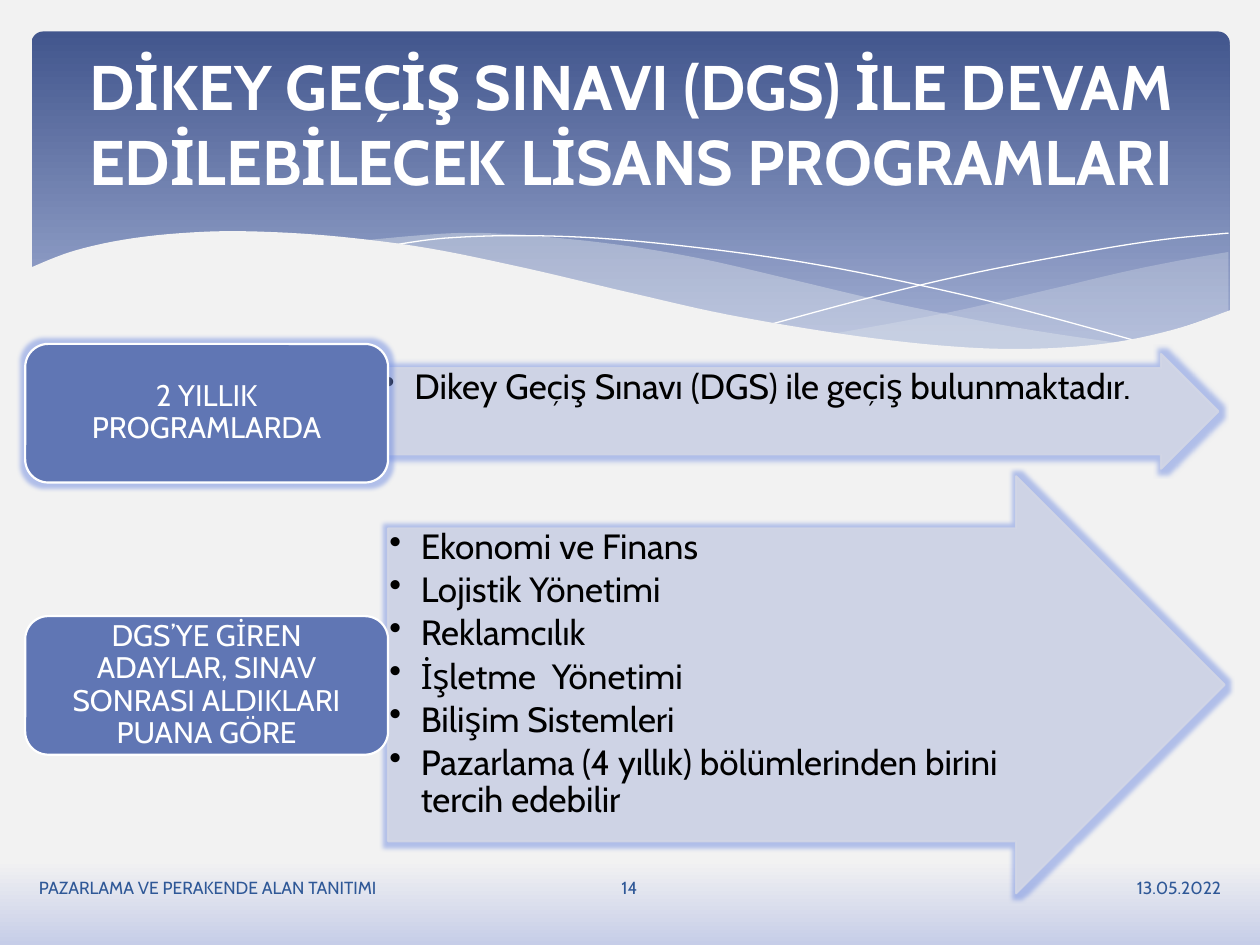
import lxml.etree
import pptx
import pptx.dml.color
import pptx.enum.shapes
import pptx.enum.text
import pptx.oxml.ns
import pptx.util

Inches = pptx.util.Inches
Pt = pptx.util.Pt
Shape = pptx.enum.shapes.MSO_SHAPE
Align = pptx.enum.text.PP_ALIGN
Anchor = pptx.enum.text.MSO_ANCHOR

PAPER, PALE, BLUE, WHITE = "F2F2F2", "D2D6E5", "6076B4", "FFFFFF"
MIST, NAVY, GLOW = "E4E9EF", "2F5897", "6F8BE0"

PALE_RIGHT_TOP = [(9.75, 2), (9.35, 2.07), (8.91, 2.16), (8.32, 2.3), (7.53, 2.48), (6.61, 2.65)]
PALE_RIGHT_BASE = [(6.61, 2.65), (7.19, 2.72), (7.69, 2.77), (8.14, 2.78), (8.63, 2.75), (9.13, 2.67), (9.75, 2.47)]
PALE_LONG_TOP = [(8.93, 2.73), (8.07, 2.6), (7.06, 2.4), (6.29, 2.22), (5.55, 2.05), (4.89, 1.94),
                 (4.2, 1.87), (3.61, 1.85), (2.86, 1.91)]
PALE_LONG_BASE = [(2.86, 1.91), (3.62, 2.03), (4.49, 2.22), (5.3, 2.4), (6.18, 2.58), (6.95, 2.7),
                  (7.61, 2.77), (8.18, 2.78), (8.93, 2.73)]
FALLING_LINE = [(3.09, 1.95), (3.53, 1.89), (4.16, 1.87), (4.89, 1.9), (5.82, 2), (6.65, 2.13),
                (7.6, 2.33), (8.31, 2.51), (9.07, 2.72)]
RISING_LINE = [(6.13, 2.57), (6.95, 2.35), (7.76, 2.16), (8.66, 1.99), (9.24, 1.9), (9.75, 1.85)]
WAVE_TOP = [(9.77, 2.46), (9.3, 2.62), (8.75, 2.73), (8.09, 2.77), (7.44, 2.74), (6.68, 2.65),
            (5.79, 2.5), (5.03, 2.33), (4.18, 2.13), (3.4, 1.97), (2.71, 1.88), (2.11, 1.84),
            (1.61, 1.84), (1.06, 1.89), (0.59, 1.99), (0.23, 2.13)]
WAVE_BASE = [(0.23, 3.29), (9.77, 3.29)]


def color(value):
    return pptx.dml.color.RGBColor.from_string(value)


def curve(knots, steps=6):
    ends = [knots[0], *knots, knots[-1]]
    points = [knots[0]]
    for a, b, c, d in zip(ends, ends[1:], ends[2:], ends[3:]):
        for step in range(1, steps + 1):
            t = step / steps
            points.append(tuple(
                (2 * q + (r - p) * t + (2 * p - 5 * q + 4 * r - s) * t ** 2
                 + (3 * q - p - 3 * r + s) * t ** 3) / 2
                for p, q, r, s in zip(a, b, c, d)))
    return points


def add_node(parent, tag, **attributes):
    return lxml.etree.SubElement(parent, pptx.oxml.ns.qn(tag), attributes)


def set_alpha(fill_owner, percent):
    for solid in fill_owner.findall(pptx.oxml.ns.qn("a:solidFill")):
        add_node(solid[0], "a:alpha", val=str(percent * 1000))


def set_gradient(fill, stops):
    fill.gradient()
    fill.gradient_angle = 270
    for stop, (position, value) in zip(fill.gradient_stops, stops):
        stop.position = position
        stop.color.rgb = color(value)


def write(frame, *lines, size=20, ink="000000", bold=False, align=Align.LEFT, anchor=Anchor.MIDDLE,
          inset=(0.1, 0.05), spacing=None, after=0, bullet=False):
    frame.word_wrap = True
    frame.auto_size = pptx.enum.text.MSO_AUTO_SIZE.NONE
    frame.vertical_anchor = anchor
    frame.margin_left = frame.margin_right = Inches(inset[0])
    frame.margin_top = frame.margin_bottom = Inches(inset[1])
    for index, line in enumerate(lines):
        para = frame.add_paragraph() if index else frame.paragraphs[0]
        para.alignment = align
        para.line_spacing = spacing
        para.space_after = Pt(after)
        if bullet:
            properties = para._p.get_or_add_pPr()
            properties.set("marL", str(Inches(0.25)))
            properties.set("indent", str(-Inches(0.25)))
            add_node(properties, "a:buChar", char="•")
        span = para.add_run()
        span.text = line
        span.font.name = "Cabin"
        span.font.size = Pt(size)
        span.font.bold = bold
        span.font.color.rgb = color(ink)


class SlideBuilder:
    def __init__(self, deck):
        self.slide = deck.slides.add_slide(deck.slide_layouts[5])
        self.shapes = self.slide.shapes

    def background(self, *stops):
        set_gradient(self.slide.background.fill, stops)

    def title(self, text, *place):
        box = self.shapes.title
        box.left, box.top, box.width, box.height = map(Inches, place)
        write(box.text_frame, text, size=36, ink=WHITE, bold=True, align=Align.CENTER)
        self.shapes._spTree.append(box._element)

    def preset(self, kind, *place, adjust=()):
        shape = self.shapes.add_shape(kind, *map(Inches, place))
        shape.shadow.inherit = False
        for index, value in enumerate(adjust):
            shape.adjustments[index] = value
        return shape

    def banner(self, *place, stops):
        shape = self.preset(Shape.ROUNDED_RECTANGLE, *place, adjust=[0.034])
        set_gradient(shape.fill, stops)
        shape.line.fill.background()

    def freeform(self, points, fill=None, alpha=100):
        points = [tuple(map(Inches, point)) for point in points]
        outline = self.shapes.build_freeform(*points[0])
        outline.add_line_segments(points[1:], close=bool(fill))
        shape = outline.convert_to_shape()
        shape.shadow.inherit = False
        if fill:
            shape.fill.solid()
            shape.fill.fore_color.rgb = color(fill)
            set_alpha(shape._element.spPr, alpha)
            shape.line.fill.background()
        else:
            shape.fill.background()
            shape.line.color.rgb = color(WHITE)
            shape.line.width = Pt(0)

    def paint(self, shape, fill, line, glow):
        shape.fill.solid()
        shape.fill.fore_color.rgb = color(fill)
        shape.line.color.rgb = color(line)
        shape.line.width = Pt(1.25)
        if glow:
            effects = shape._element.spPr.find(pptx.oxml.ns.qn("a:effectLst"))
            halo = add_node(effects, "a:glow", rad=str(Pt(5)))
            tint = add_node(halo, "a:srgbClr", val=GLOW)
            add_node(tint, "a:alpha", val="50000")

    def arrow(self, *place, lines):
        shape = self.preset(Shape.RIGHT_ARROW, *place, adjust=[0.75, 0.5])
        self.paint(shape, PALE, PALE, glow=True)
        set_alpha(shape._element.spPr, 90)
        set_alpha(shape.line._ln, 90)
        write(shape.text_frame, *lines, anchor=Anchor.TOP, inset=(0.01, 0.01),
              spacing=0.9, after=3, bullet=True)

    def label(self, text, top, glow):
        shape = self.preset(Shape.ROUNDED_RECTANGLE, 0.2, top, 2.88, 1.1)
        self.paint(shape, BLUE, WHITE, glow)
        write(shape.text_frame, text, size=17, ink=WHITE, align=Align.CENTER,
              inset=(0.12, 0.09), spacing=0.9)

    def footer(self, text, left, width, align):
        box = self.shapes.add_textbox(*map(Inches, (left, 6.84, width, 0.4)))
        write(box.text_frame, text, size=10, ink=NAVY, align=align)


def main():
    deck = pptx.Presentation()
    deck.slide_width, deck.slide_height = Inches(10), Inches(7.5)
    page = SlideBuilder(deck)
    page.background((0.91, PAPER), (1, "C6CDE8"))
    page.banner(0.25, 0.25, 9.51, 2.7, stops=[(0, "42568D"), (0.9, "A0ADD2")])
    page.freeform(curve(PALE_RIGHT_TOP) + curve(PALE_RIGHT_BASE), MIST, 29)
    page.freeform(curve(PALE_LONG_TOP) + curve(PALE_LONG_BASE), MIST, 40)
    page.freeform(curve(FALLING_LINE))
    page.freeform(curve(RISING_LINE))
    page.freeform(curve(WAVE_TOP) + WAVE_BASE, PAPER)
    page.title("DİKEY GEÇİŞ SINAVI (DGS) İLE DEVAM EDİLEBİLECEK LİSANS PROGRAMLARI",
               0.51, 0.29, 9, 1.37)
    page.arrow(3.03, 2.81, 6.64, 0.91, lines=["Dikey Geçiş Sınavı (DGS) ile geçiş bulunmaktadır."])
    page.label("2 YILLIK PROGRAMLARDA", 2.73, glow=True)
    page.arrow(3.08, 3.78, 6.64, 3.31, lines=[
        "Ekonomi ve Finans", "Lojistik Yönetimi", "Reklamcılık", "İşletme  Yönetimi",
        "Bilişim Sistemleri", "Pazarlama (4 yıllık) bölümlerinden birini tercih edebilir"])
    page.label("DGS’YE GİREN ADAYLAR, SINAV SONRASI ALDIKLARI PUANA GÖRE", 4.89, glow=False)
    page.footer("13.05.2022", 5.65, 4.14, Align.RIGHT)
    page.footer("PAZARLAMA VE PERAKENDE ALAN TANITIMI", 0.21, 4.14, Align.LEFT)
    page.footer("14", 4.36, 1.27, Align.CENTER)
    deck.save("out.pptx")


if __name__ == "__main__":
    main()
